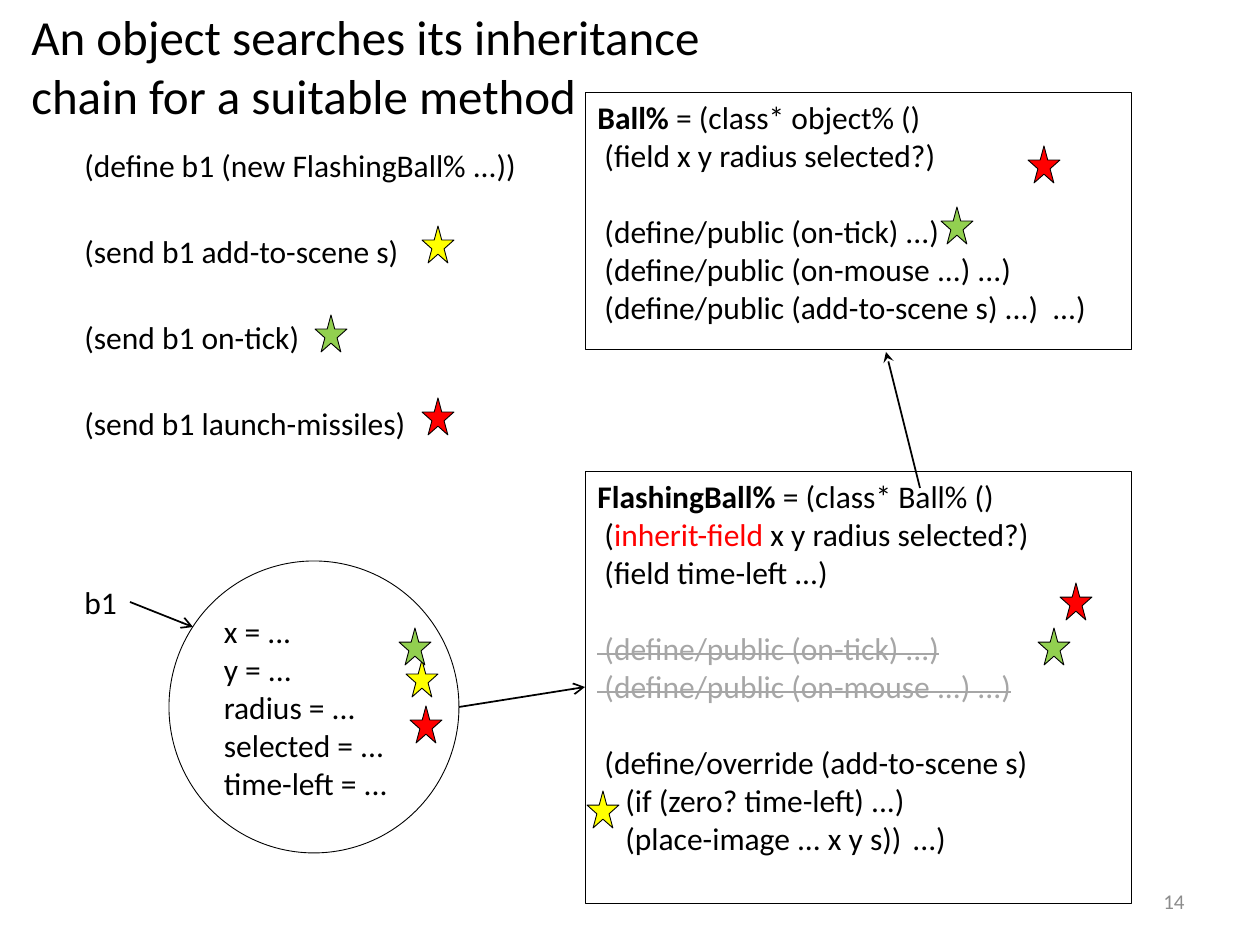
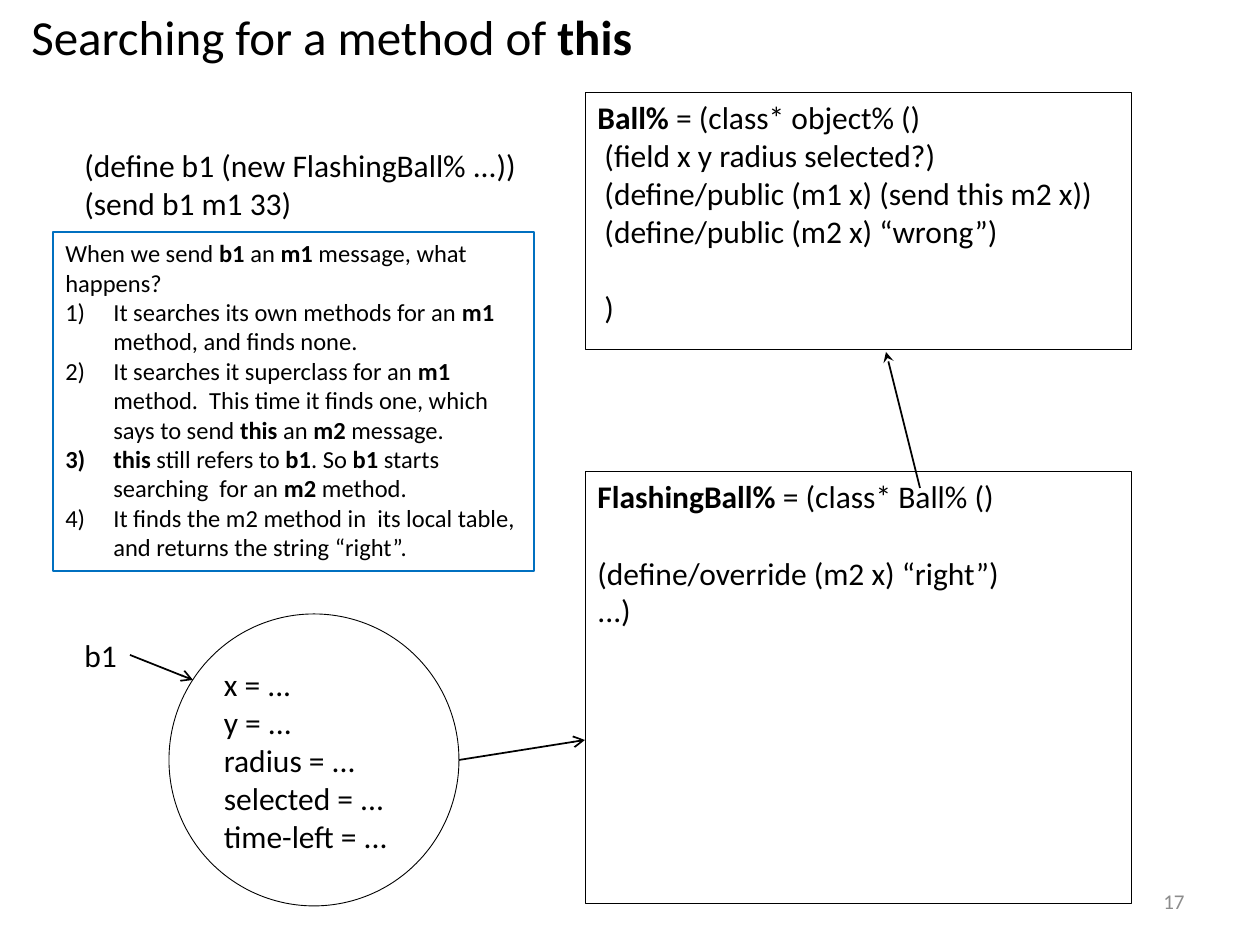
from dataclasses import dataclass, field

from lxml.etree import SubElement
from pptx import Presentation
from pptx.dml.color import RGBColor
from pptx.enum.shapes import MSO_CONNECTOR, MSO_SHAPE
from pptx.enum.text import MSO_ANCHOR, MSO_AUTO_SIZE, PP_ALIGN
from pptx.oxml.ns import qn
from pptx.util import Emu, Pt

PX_PER_INCH = 126
FONT = "Calibri"
BLACK, WHITE, GRAY, FADED = "000000", "FFFFFF", "8C8C8C", "A6A6A6"
RED, YELLOW, GREEN, BLUE = "FF0000", "FFFF00", "92D050", "0070C0"
CODE_GAP = 22
BALL_BOX = (585, 92, 546, 257)
FLASHING_BOX = (585, 471, 546, 432)
FIELDS = ["x = ...", "y = ...", "radius = ...", "selected = ...", "time-left = ..."]


@dataclass
class Line:
    """A paragraph in which bars enclose the runs that take the mark format."""
    text: str
    gap: int = 0
    indent: int = 0
    tab: int = 0
    numbered: bool = False
    struck: bool = False
    color: str = BLACK
    mark: dict = field(default_factory=lambda: {"bold": True})


def px(length):
    """Turn pixels into EMU."""
    return Emu(round(length * 914400 / PX_PER_INCH))


def rgb(hex_color):
    """Turn a hex string into a colour."""
    return RGBColor.from_string(hex_color)


def add_run(paragraph, text, size=18, color=BLACK, bold=False, struck=False):
    """Append one formatted run."""
    run = paragraph.add_run()
    run.text = text
    run.font.name = FONT
    run.font.size = Pt(size)
    run.font.bold = bold
    run.font.color.rgb = rgb(color)
    if struck:
        run.font._element.set("strike", "sngStrike")


def write(shape, lines, size=18, align=PP_ALIGN.LEFT, anchor=MSO_ANCHOR.TOP,
          wrap=True, grow=False, color=BLACK):
    """Fill a shape with paragraphs given as strings or Lines."""
    frame = shape.text_frame
    frame.word_wrap = wrap
    frame.vertical_anchor = anchor
    frame.auto_size = MSO_AUTO_SIZE.SHAPE_TO_FIT_TEXT if grow else MSO_AUTO_SIZE.NONE
    for index, entry in enumerate(lines):
        line = entry if isinstance(entry, Line) else Line(entry, color=color)
        paragraph = frame.add_paragraph() if index else frame.paragraphs[0]
        paragraph.alignment = align
        if line.gap:
            paragraph.space_before = Pt(line.gap)
        properties = paragraph._p.get_or_add_pPr()
        if line.indent:
            properties.set("indent", str(px(line.indent)))
        if line.numbered:
            properties.set("marL", str(px(48)))
            properties.set("indent", str(px(-48)))
            SubElement(properties, qn("a:buFont"), typeface="+mj-lt")
            SubElement(properties, qn("a:buAutoNum"), type="arabicParenR")
        if line.tab:
            stops = SubElement(properties, qn("a:tabLst"))
            SubElement(stops, qn("a:tab"), pos=str(px(line.tab)), algn="l")
        for position, part in enumerate(line.text.split("|")):
            if part:
                style = {"color": line.color, "struck": line.struck}
                if position % 2:
                    style.update(line.mark)
                add_run(paragraph, part, size, **style)


def add_text(slide, box, lines, **style):
    """Place a text box."""
    write(slide.shapes.add_textbox(*map(px, box)), lines, **style)


def add_outline(slide, kind, box, fill=None, line=BLACK, width=0.5):
    """Place a thinly outlined preset shape."""
    shape = slide.shapes.add_shape(kind, *map(px, box))
    shape.shadow.inherit = False
    if fill:
        shape.fill.solid()
        shape.fill.fore_color.rgb = rgb(fill)
    else:
        shape.fill.background()
    shape.line.color.rgb = rgb(line)
    shape.line.width = Pt(width)
    return shape


def add_arrow(slide, start, end, head="arrow"):
    """Draw an arrow from start to end."""
    arrow = slide.shapes.add_connector(MSO_CONNECTOR.STRAIGHT, *map(px, start + end))
    arrow.line.color.rgb = rgb(BLACK)
    arrow.line.width = Pt(1)
    SubElement(arrow.line._get_or_add_ln(), qn("a:tailEnd"), type=head)
    SubElement(arrow._element.spPr, qn("a:effectLst"))


def add_stars(slide, color, places):
    """Scatter the stars that mark one message."""
    for left, top in places:
        add_outline(slide, MSO_SHAPE.STAR_5_POINT, (left, top, 32, 37), fill=color)


def add_class_chain(slide, ball_lines, flashing_lines):
    """Draw the two classes and the arrow to the superclass."""
    for box, lines in ((BALL_BOX, ball_lines), (FLASHING_BOX, flashing_lines)):
        write(add_outline(slide, MSO_SHAPE.RECTANGLE, box), lines)
    left, top, _, height = BALL_BOX
    add_arrow(slide, (left + 335, FLASHING_BOX[1] + 17),
              (left + 301, top + height + 3), head="stealth")


def add_instance(slide, top):
    """Draw the object b1 with its fields and its link to the class."""
    left, width, height = 169, 290, 292
    circle = add_outline(slide, MSO_SHAPE.OVAL, (left, top, width, height))
    write(circle, FIELDS, anchor=MSO_ANCHOR.MIDDLE)
    add_text(slide, (left - 97, top + 16, 58, 50), ["b1"], wrap=False, grow=True)
    add_arrow(slide, (left - 39, top + 41), (left + 24, top + 66))
    middle = top + height // 2
    add_arrow(slide, (left + width, middle), (FLASHING_BOX[0], middle - 20))


def add_explanation(slide, box):
    """Explain how the message is resolved."""
    panel = add_outline(slide, MSO_SHAPE.RECTANGLE, box, line=BLUE, width=0.75)
    steps = [
        "It searches its own methods for an |m1| method, and finds none.",
        "It searches it superclass for an |m1| method.  This time it finds one, "
        "which says to send |this| an |m2| message.",
        "|this| still refers to |b1|. So |b1| starts searching  for an |m2| method.",
        "It finds the m2 method in  its local table, and returns the string “right”.",
    ]
    question = "When we send |b1| an |m1| message, what happens?"
    write(panel, [question] + [Line(step, numbered=True) for step in steps],
          size=14, grow=True)


def start_slide(deck, title, title_height, number):
    """Add a blank slide with its title and number."""
    slide = deck.slides.add_slide(deck.slide_layouts[6])
    add_text(slide, (19, 0, 706, title_height), [title], size=28, grow=True)
    add_text(slide, (903, 876, 294, 50), [number], size=12, color=GRAY,
             align=PP_ALIGN.RIGHT, anchor=MSO_ANCHOR.MIDDLE)
    return slide


def build_chain_slide(deck):
    """Show which class answers each message."""
    slide = start_slide(
        deck, "An object searches its inheritance chain for a suitable method", 131, "14")
    add_class_chain(slide, [
        "|Ball%| = (class* object% ()",
        " (field x y radius selected?)",
        Line(" (define/public (on-tick) ...)", gap=CODE_GAP),
        " (define/public (on-mouse ...) ...)",
        " (define/public (add-to-scene s) ...)  ...)",
    ], [
        "|FlashingBall%| = (class* Ball% ()",
        Line(" (|inherit-field| x y radius selected?)", mark={"color": RED}),
        " (field time-left ...)",
        Line(" (define/public (on-tick) ...)", gap=CODE_GAP, struck=True, color=FADED),
        Line(" (define/public (on-mouse ...) ...)", struck=True, color=FADED),
        Line(" (define/override (add-to-scene s)", gap=CODE_GAP),
        Line("(if (zero? time-left) ...)", indent=28),
        Line("(place-image ... x y s))\t...)", indent=28, tab=348),
    ])
    messages = [("(define b1 (new FlashingBall% ...))", 462),
                ("(send b1 add-to-scene s)", 344),
                ("(send b1 on-tick)", 243),
                ("(send b1 launch-missiles)", 350)]
    for row, (message, width) in enumerate(messages):
        add_text(slide, (72, 140 + 86 * row, width, 50), [message], wrap=False, grow=True)
    add_instance(slide, 561)
    add_stars(slide, YELLOW, [(422, 226), (406, 660), (587, 791)])
    add_stars(slide, GREEN, [(315, 315), (1038, 628), (941, 207), (399, 628)])
    add_stars(slide, RED, [(422, 398), (410, 706), (1060, 583), (1028, 146)])


def build_this_slide(deck):
    """Show how a message to this is resolved."""
    slide = start_slide(deck, "Searching for a method of |this|", 72, "17")
    add_class_chain(slide, [
        "|Ball%| = (class* object% ()",
        " (field x y radius selected?)",
        " (define/public (m1 x) (send this m2 x))",
        " (define/public (m2 x) “wrong”)",
        Line(" )", gap=CODE_GAP),
    ], [
        "|FlashingBall%| = (class* Ball% ()",
        Line("(define/override (m2 x) “right”)", gap=CODE_GAP),
        "...)",
    ])
    add_text(slide, (72, 140, 462, 89),
             ["(define b1 (new FlashingBall% ...))", "(send b1 m1 33)"],
             wrap=False, grow=True)
    add_instance(slide, 614)
    add_explanation(slide, (53, 232, 481, 339))


def main():
    """Build and save the two slides."""
    deck = Presentation()
    deck.slide_width, deck.slide_height = px(1260), px(945)
    build_chain_slide(deck)
    build_this_slide(deck)
    deck.save("out.pptx")


if __name__ == "__main__":
    main()
